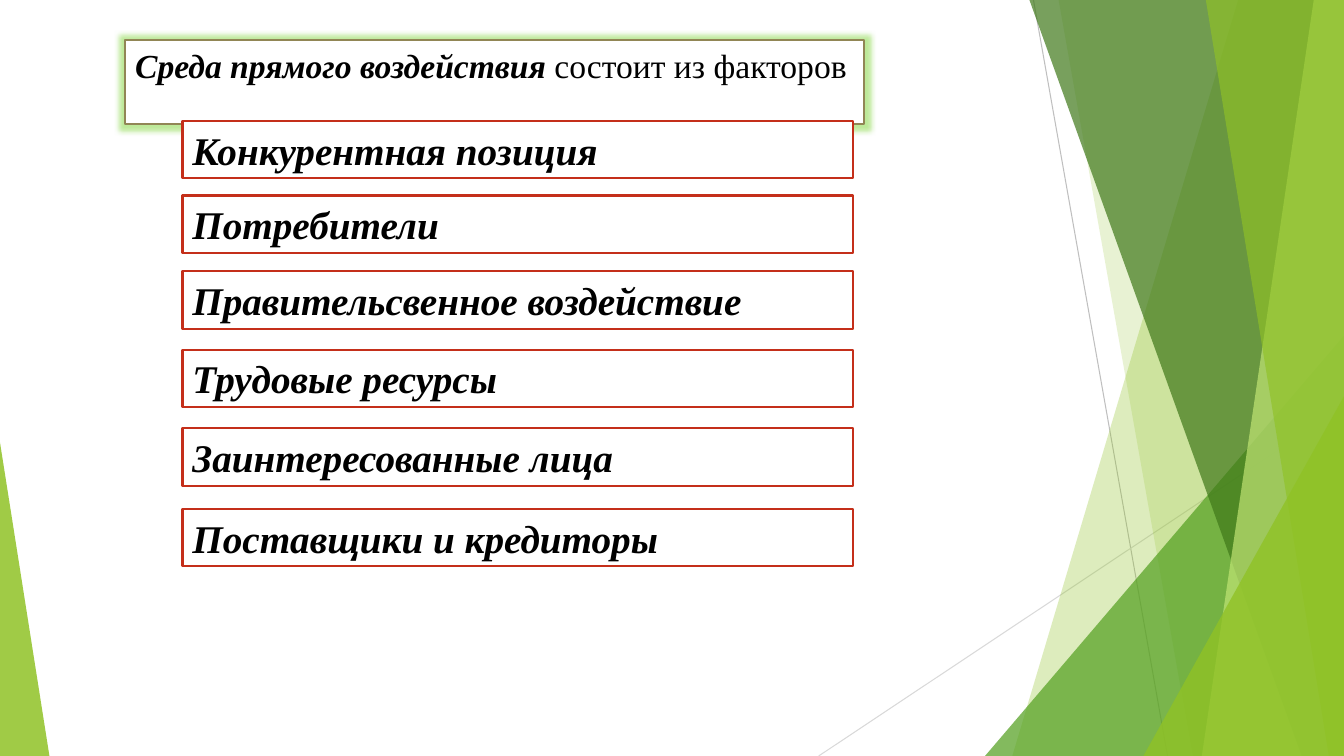
"""Builds a slide listing the factors of the direct-impact environment."""
from lxml.etree import SubElement
from pptx import Presentation
from pptx.dml.color import RGBColor
from pptx.enum.shapes import MSO_CONNECTOR, MSO_SHAPE
from pptx.enum.text import MSO_ANCHOR, MSO_AUTO_SIZE, PP_ALIGN
from pptx.oxml.ns import qn
from pptx.util import Inches, Pt

W, H = 13.33, 7.5
COLORS = {
    "white": "FFFFFF", "black": "000000", "olive": "918655", "red": "C42F1A",
    "lime": "90C226", "green": "54A021", "forest": "3F7819", "pale": "C0E474",
    "glow": "5CC800", "gray": "BFBFBF", "light_gray": "D9D9D9",
}


def paint(sp, color, alpha):
    sp.shadow.inherit = False
    sp.fill.solid()
    sp.fill.fore_color.rgb = RGBColor.from_string(COLORS[color])
    clr = sp.fill._xPr.find(qn("a:solidFill"))[0]
    SubElement(clr, qn("a:alpha"), val=str(alpha * 1000))
    sp.line.fill.background()


def label(sp, parts, size, border):
    sp.fill.solid()
    sp.fill.fore_color.rgb = RGBColor.from_string(COLORS["white"])
    sp.line.color.rgb = RGBColor.from_string(COLORS[border])
    sp.line.width = Pt(1.5)
    tf = sp.text_frame
    tf.vertical_anchor = MSO_ANCHOR.TOP
    tf.auto_size = MSO_AUTO_SIZE.SHAPE_TO_FIT_TEXT
    p = tf.paragraphs[0]
    p.alignment = PP_ALIGN.LEFT
    for text, strong in parts:
        r = p.add_run()
        r.text = text
        r.font.name = "Times New Roman"
        r.font.size = Pt(size)
        r.font.bold = r.font.italic = strong
        r.font.color.rgb = RGBColor.from_string(COLORS["black"])


prs = Presentation()
prs.slide_width, prs.slide_height = Inches(W), Inches(H)
slide = prs.slides.add_slide(prs.slide_layouts.get_by_name("Title Only"))
shapes = slide.shapes

for x1, y1, x2, y2, color in [
    (10.25, 0, 11.58, H, "gray"),
    (W, 4.03, 8.12, H, "light_gray"),
]:
    line = shapes.add_connector(
        MSO_CONNECTOR.STRAIGHT, Inches(x1), Inches(y1), Inches(x2), Inches(y2))
    line.line.color.rgb = RGBColor.from_string(COLORS[color])
    line.line.width = Pt(0.75)
    SubElement(line._element.spPr, qn("a:effectLst"))

facets = [
    ("band", 12.28, 10.04, "lime", 30),
    ("band", 10.5, 11.83, "lime", 20),
    ("triangle", 3.33, 9.77, "green", 72),
    ("band", 10.21, 12.91, "forest", 70),
    ("band", 13.03, 11.92, "pale", 70),
    ("band", 11.96, 13.18, "lime", 65),
    ("triangle", 3.93, 11.34, "lime", 80),
]
for kind, top, bottom_x, color, alpha in facets:
    if kind == "band":
        corners = [(W, 0), (W, H), (bottom_x, H)]
        outline = shapes.build_freeform(Inches(top), 0)
        outline.add_line_segments([(Inches(x), Inches(y)) for x, y in corners])
        sp = outline.convert_to_shape()
    else:
        sp = shapes.add_shape(
            MSO_SHAPE.ISOSCELES_TRIANGLE, Inches(bottom_x), Inches(top),
            Inches(W - bottom_x), Inches(H - top))
        sp.adjustments[0] = 1
    paint(sp, color, alpha)

corner = shapes.add_shape(
    MSO_SHAPE.ISOSCELES_TRIANGLE, 0, Inches(4.39), Inches(0.49), Inches(H - 4.39))
corner.adjustments[0] = 0
paint(corner, "lime", 85)

title = shapes.title
title.left, title.top = Inches(1.24), Inches(0.4)
title.width, title.height = Inches(7.33), Inches(0.5)
label(title, [("Среда прямого воздействия", True), (" состоит из факторов", False)],
      24, "olive")
title.text_frame.word_wrap = False
effects = SubElement(title._element.spPr, qn("a:effectLst"))
glow = SubElement(effects, qn("a:glow"), rad=str(Pt(8)))
glow_color = SubElement(glow, qn("a:srgbClr"), val=COLORS["glow"])
SubElement(glow_color, qn("a:alpha"), val="40000")

factors = [
    (1.2, "Конкурентная позиция"),
    (1.94, "Потребители"),
    (2.69, "Правительсвенное воздействие"),
    (3.47, "Трудовые ресурсы"),
    (4.25, "Заинтересованные лица"),
    (5.05, "Поставщики и кредиторы"),
]
for top, factor in factors:
    sp = shapes.add_shape(
        MSO_SHAPE.RECTANGLE, Inches(1.81), Inches(top), Inches(6.65), Inches(0.57))
    sp.shadow.inherit = False
    label(sp, [(factor, True)], 28, "red")

prs.save("out.pptx")
